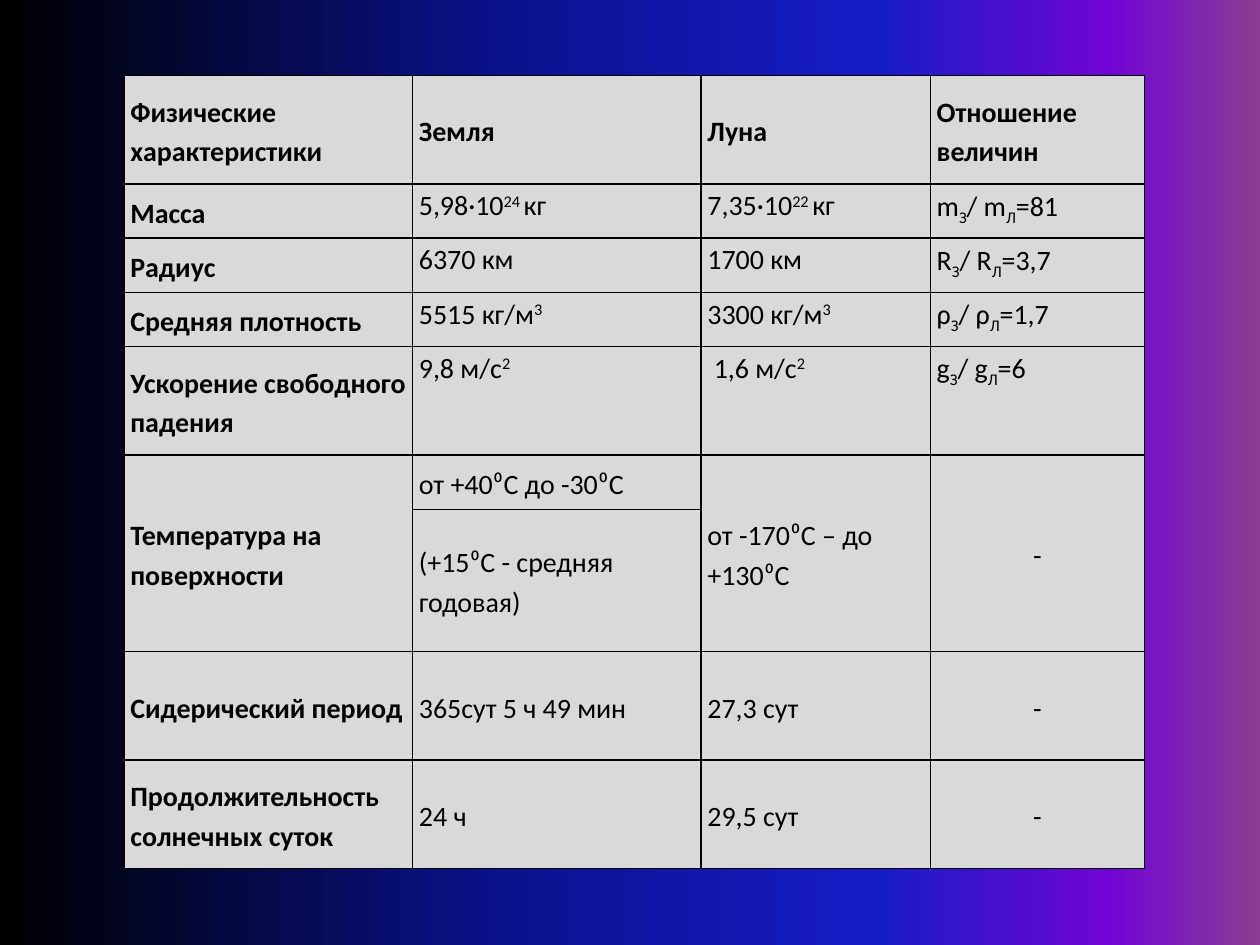
from lxml import etree
from pptx import Presentation
from pptx.dml.color import RGBColor
from pptx.enum import text
from pptx.oxml import ns
from pptx.util import Pt


def colour(value):
    return RGBColor.from_string(value)


def add_solid(parent, tag, value, **attributes):
    """Add an element that holds one RGB colour."""
    item = etree.SubElement(parent, ns.qn(tag), attributes)
    etree.SubElement(item, ns.qn("a:srgbClr"), val=value)
    return item


deck = Presentation()
deck.slide_width, deck.slide_height = Pt(720), Pt(540)
page = deck.slides.add_slide(deck.slide_layouts[6])

# Background: left-to-right gradient
backdrop = page.background.fill
backdrop.gradient()
backdrop.gradient_angle = 0
stops = page.element.find(".//" + ns.qn("a:gsLst"))
for stop in list(stops):
    stops.remove(stop)
for percent, value in [(0, "000000"), (40, "0A128C"), (70, "181CC7"),
                       (88, "7005D4"), (100, "8C3D91")]:
    add_solid(stops, "a:gs", value, pos=str(percent * 1000))

# Table content: ^...^ is superscript, _..._ is subscript
rows = [
    ["Физические характеристики", "Земля", "Луна", "Отношение величин"],
    ["Масса", "5,98·10^24 ^кг", "7,35·10^22 ^кг", "m_З_/ m_Л_=81"],
    ["Радиус", "6370 км", "1700 км", "R_З_/ R_Л_=3,7"],
    ["Средняя плотность", "5515 кг/м^3^", "3300 кг/м^3^", "ρ_З_/ ρ_Л_=1,7"],
    ["Ускорение свободного падения", "9,8 м/с^2^", " 1,6 м/с^2^", "g_З_/ g_Л_=6"],
    ["Температура на поверхности", "от +40⁰С до -30⁰С", "от -170⁰С – до +130⁰С", "-"],
    ["", "(+15⁰С - средняя годовая)", "", ""],
    ["Сидерический период", "365сут 5 ч 49 мин", "27,3 сут", "-"],
    ["Продолжительность солнечных суток", "24 ч", "29,5 сут", "-"],
]
widths = [164.9, 164.9, 131, 122.4]
heights = [62, 31, 31, 31, 62, 31, 81.4, 62, 62]
top_aligned_rows = range(1, 5)

table = page.shapes.add_table(len(rows), len(widths), Pt(70.9), Pt(43.1),
                              Pt(sum(widths)), Pt(sum(heights))).table
table.first_row = table.horz_banding = False
for column, width in zip(table.columns, widths):
    column.width = Pt(width)
for row, height in zip(table.rows, heights):
    row.height = Pt(height)

# The temperature row spans two lines except for Earth
for c in (0, 2, 3):
    table.cell(5, c).merge(table.cell(6, c))

cell_format = {"margin_left": Pt(3.6), "margin_right": Pt(3.6),
               "margin_top": 0, "margin_bottom": 0}
para_format = {"line_spacing": 1.15, "space_after": Pt(10)}

for r, row in enumerate(rows):
    for c, content in enumerate(row):
        cell = table.cell(r, c)
        for name, value in cell_format.items():
            setattr(cell, name, value)
        at_top = r in top_aligned_rows and c > 0
        cell.vertical_anchor = text.MSO_ANCHOR.TOP if at_top else text.MSO_ANCHOR.MIDDLE
        cell.fill.solid()
        cell.fill.fore_color.rgb = colour("D9D9D9")

        # Borders come before the fill in the cell properties
        properties = cell._tc.get_or_add_tcPr()
        for place, side in enumerate("LRTB"):
            line = etree.SubElement(properties, ns.qn("a:ln" + side), w=str(Pt(1)))
            add_solid(line, "a:solidFill", "000000")
            properties.insert(place, line)

        if not content:
            continue
        para = cell.text_frame.paragraphs[0]
        for name, value in para_format.items():
            setattr(para, name, value)
        if content == "-":
            para.alignment = text.PP_ALIGN.CENTER
        mark, shift = ("_", "-25000") if "_" in content else ("^", "30000")
        for index, piece in enumerate(content.split(mark)):
            if not piece:
                continue
            span = para.add_run()
            span.text = piece
            span.font.name = "Calibri"
            span.font.size = Pt(16)
            span.font.bold = r == 0 or c == 0
            span.font.color.rgb = colour("000000")
            if index % 2:
                span.font._element.set("baseline", shift)

deck.save("out.pptx")
